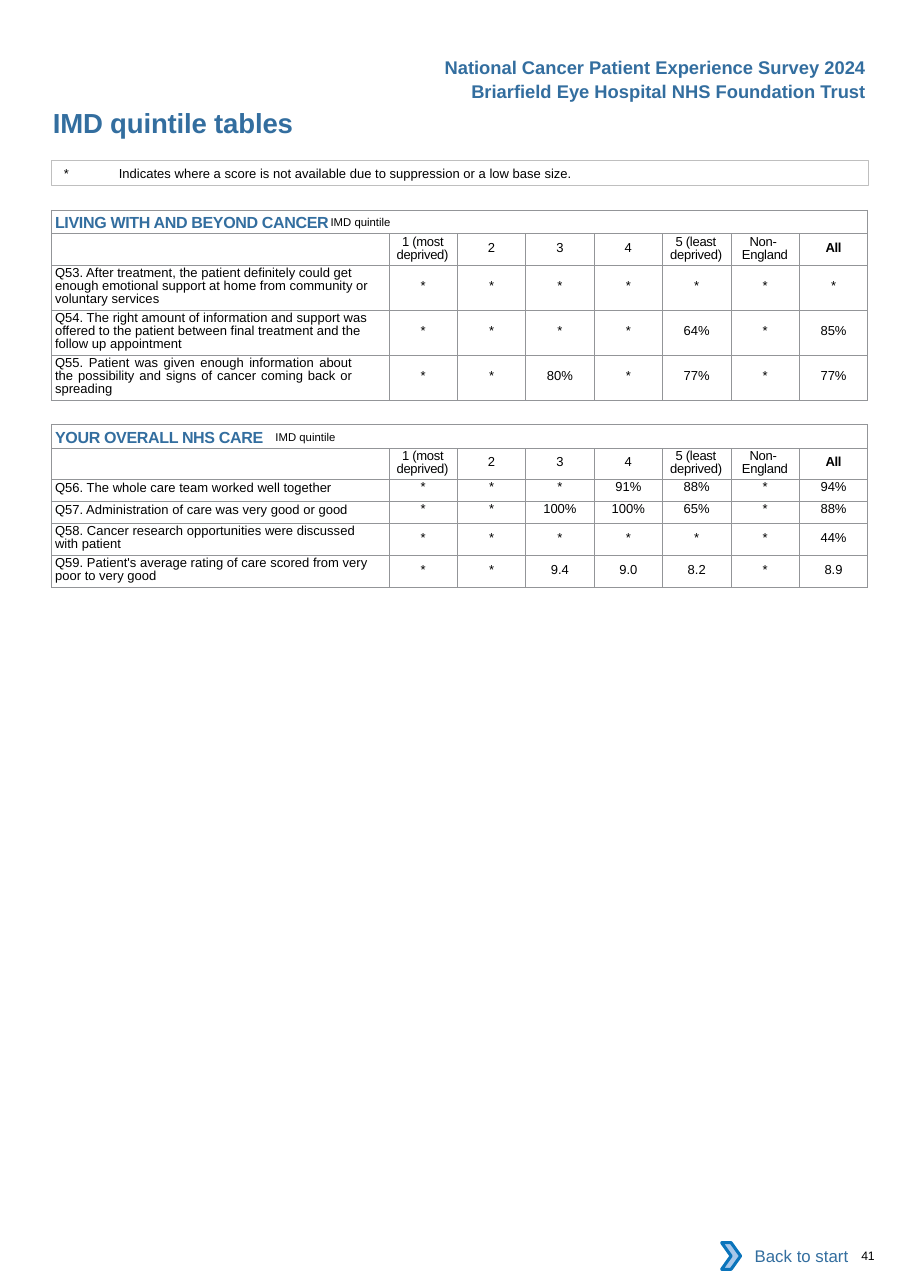
from lxml.etree import SubElement
from pptx import Presentation
from pptx.dml.color import RGBColor
from pptx.enum.shapes import MSO_SHAPE
from pptx.enum.text import MSO_ANCHOR, PP_ALIGN
from pptx.oxml.ns import qn
from pptx.util import Pt

BLUE = RGBColor(0x33, 0x6E, 0x9F)
BLACK = RGBColor(0, 0, 0)
WHITE = RGBColor(0xFF, 0xFF, 0xFF)
BOX_GREY = RGBColor(0xBF, 0xBF, 0xBF)
GRID_GREY = RGBColor(0x93, 0x95, 0x98)
ARROW_FILL = RGBColor(0xA8, 0xC7, 0xE9)
ARROW_LINE = RGBColor(0x0A, 0x74, 0xBB)

LEFT, WIDTH = 33.8, 533.5
QUESTION_WIDTH, SCORE_WIDTH = 220.4, 44.73
ROW_HEIGHTS = {1: 14.3, 2: 20.9, 3: 29.4}
COLUMNS = ["1 (most deprived)", "2", "3", "4", "5 (least deprived)", "Non- England", "All"]

LIVING = [
    ("Q53. After treatment, the patient definitely could get enough emotional support "
     "at home from community or voluntary services", 3, "* * * * * * *"),
    ("Q54. The right amount of information and support was offered to the patient "
     "between final treatment and the follow up appointment", 3, "* * * * 64% * 85%"),
    ("Q55. Patient was given enough information about the possibility and signs of "
     "cancer coming back or spreading", 3, "* * 80% * 77% * 77%"),
]
OVERALL = [
    ("Q56. The whole care team worked well together", 1, "* * * 91% 88% * 94%"),
    ("Q57. Administration of care was very good or good", 1, "* * 100% 100% 65% * 88%"),
    ("Q58. Cancer research opportunities were discussed with patient", 2, "* * * * * * 44%"),
    ("Q59. Patient's average rating of care scored from very poor to very good", 2,
     "* * 9.4 9.0 8.2 * 8.9"),
]


def style_run(r, size, color=BLACK, bold=False, spacing=0):
    """Set the font of one run, with letter spacing in points."""
    r.font.name, r.font.size, r.font.bold = "Arial", Pt(size), bold
    r.font.color.rgb = color
    r._r.get_or_add_rPr().set("spc", str(round(spacing * 100)))


def write(tf, text, size, color=BLACK, bold=False, align=PP_ALIGN.LEFT, spacing=0):
    """Fill a text frame with one formatted paragraph and return it."""
    tf.word_wrap = True
    p = tf.paragraphs[0]
    p.text = text
    p.alignment = align
    for r in p.runs:
        style_run(r, size, color, bold, spacing)
    return p


def set_indent(p, left, first=0, right=0, tab=None):
    """Set paragraph indents and an optional left tab stop."""
    pPr = p._p.get_or_add_pPr()
    for name, value in (("marL", left), ("indent", first), ("marR", right)):
        pPr.set(name, str(Pt(value)))
    if tab:
        tabs = SubElement(pPr, qn("a:tabLst"))
        SubElement(tabs, qn("a:tab"), pos=str(Pt(tab)), algn="l")


def set_margins(part, left=0, top=0, right=0, bottom=0):
    """Set the inner margins of a cell or text frame."""
    part.margin_left, part.margin_top = Pt(left), Pt(top)
    part.margin_right, part.margin_bottom = Pt(right), Pt(bottom)


def set_borders(cell):
    """Draw thin grey borders around a cell and clear its fill."""
    tcPr = cell._tc.get_or_add_tcPr()
    for side in "TB" if cell.is_spanned else "LRTB":
        ln = SubElement(tcPr, qn(f"a:ln{side}"), w=str(Pt(0.5)))
        fill = SubElement(ln, qn("a:solidFill"))
        SubElement(fill, qn("a:srgbClr"), val=str(GRID_GREY))
    cell.fill.background()


def add_heading(s, title, lines):
    """Place the right-aligned survey lines and the page title."""
    for i, line in enumerate(lines):
        sp = s.shapes.add_textbox(Pt(273.1), Pt(33.1 + 16 * i), Pt(300), Pt(21.6))
        write(sp.text_frame, line, 12, BLUE, True, PP_ALIGN.RIGHT)
    sp = s.shapes.title
    sp.left, sp.top, sp.width, sp.height = Pt(LEFT), Pt(69.1), Pt(324), Pt(21.6)
    tf = sp.text_frame
    set_margins(tf)
    tf.vertical_anchor = MSO_ANCHOR.TOP
    set_indent(write(tf, title, 18, BLUE, True, spacing=-0.1), 0.7)


def add_note(s, x, y, w, h):
    """Place the outlined note about suppressed scores."""
    sp = s.shapes.add_shape(MSO_SHAPE.RECTANGLE, Pt(x), Pt(y), Pt(w), Pt(h))
    sp.shadow.inherit = False
    sp.fill.background()
    sp.line.color.rgb, sp.line.width = BOX_GREY, Pt(0.5)
    set_margins(sp.text_frame)
    p = write(sp.text_frame, "*\tIndicates where a score is not available due to "
              "suppression or a low base size.", 8.5)
    set_indent(p, 7.9, tab=24.5)


def fill_column_heads(table):
    """Write the quintile names in the second table row."""
    for c, name in enumerate(COLUMNS, 1):
        cell = table.cell(1, c)
        wraps = " " in name
        set_margins(cell, top=1.4 if wraps else 4.3)
        align = PP_ALIGN.LEFT if wraps else PP_ALIGN.CENTER
        p = write(cell.text_frame, name, 8.5, bold=name == "All", align=align,
                  spacing=-0.2)
        if wraps:
            p.line_spacing = Pt(8.6)
            left, first = (7.2, 5) if name.startswith("Non") else (5, 3.6)
            set_indent(p, left, first)


def fill_question(table, row, question, lines, scores):
    """Write one question and its scores."""
    cell = table.cell(row, 0)
    set_margins(cell, top=1.4 if lines > 1 else 0.7)
    justified = question.startswith("Q55")
    p = write(cell.text_frame, question, 8.5,
              align=PP_ALIGN.JUSTIFY if justified else PP_ALIGN.LEFT)
    if lines > 1:
        p.line_spacing = Pt(8.6)
    set_indent(p, 2.2, right=24 if justified else 8)
    for c, score in enumerate(scores.split(), 1):
        cell = table.cell(row, c)
        set_margins(cell, top=4.3 * (lines - 1) + 0.4)
        write(cell.text_frame, score, 8.5, align=PP_ALIGN.CENTER)


def add_score_table(s, x, y, w, heading, questions):
    """Place one section table with its heading, column names and scores."""
    heights = [15.4, 20.4] + [ROW_HEIGHTS[lines] for _, lines, _ in questions]
    frame = s.shapes.add_table(len(heights), 8, Pt(x), Pt(y), Pt(w), Pt(sum(heights)))
    table = frame.table
    table.first_row = table.horz_banding = False
    for i, column in enumerate(table.columns):
        column.width = Pt(SCORE_WIDTH if i else QUESTION_WIDTH)
    for row, height in zip(table.rows, heights):
        row.height = Pt(height)
    head = table.cell(0, 0)
    head.merge(table.cell(0, 7))
    head.vertical_anchor = MSO_ANCHOR.MIDDLE
    p = write(head.text_frame, heading + "\t", 10.5, BLUE, True, spacing=-0.2)
    set_indent(p, 2.2, tab=340)
    r = p.add_run()
    r.text = "IMD quintile"
    style_run(r, 12.8)
    r._r.get_or_add_rPr().set("baseline", "10000")
    set_margins(head)
    fill_column_heads(table)
    for row, question in enumerate(questions, 2):
        fill_question(table, row, *question)
    for cell in table.iter_cells():
        set_borders(cell)
        if not cell.text_frame.text:
            set_margins(cell)
            SubElement(cell.text_frame.paragraphs[0]._p, qn("a:endParaRPr"), sz="850")


def add_footer(s, x, y, w, h):
    """Place the back-to-start button and the page number."""
    button = s.shapes.add_group_shape()
    label = button.shapes.add_shape(MSO_SHAPE.RECTANGLE, Pt(x + 5), Pt(y),
                                    Pt(w - 5), Pt(h))
    label.fill.solid()
    label.fill.fore_color.rgb = WHITE
    label.line.fill.background()
    write(label.text_frame, "Back to start", 11, BLUE, align=PP_ALIGN.RIGHT)
    arrow = button.shapes.add_shape(MSO_SHAPE.CHEVRON, Pt(x), Pt(y + 6.4),
                                    Pt(12.4), Pt(17.4))
    arrow.fill.solid()
    arrow.fill.fore_color.rgb = ARROW_FILL
    arrow.line.color.rgb, arrow.line.width = ARROW_LINE, Pt(2)
    for sp in (label, arrow):
        sp.shadow.inherit = False
    number = s.shapes.add_textbox(Pt(x + w - 5.8), Pt(y + 10), Pt(36.7), Pt(9.4))
    set_margins(number.text_frame)
    set_indent(write(number.text_frame, "41", 8, spacing=-0.2), 7.2)


def main():
    """Build the quintile page and save it."""
    prs = Presentation()
    prs.slide_width, prs.slide_height = Pt(594.72), Pt(841.68)
    s = prs.slides.add_slide(prs.slide_layouts[5])
    add_heading(s, "IMD quintile tables",
                ["National Cancer Patient Experience Survey 2024",
                 "Briarfield Eye Hospital NHS Foundation Trust"])
    add_note(s, LEFT, 105, WIDTH, 16)
    add_score_table(s, LEFT, 137.4, WIDTH, "LIVING WITH AND BEYOND CANCER", LIVING)
    add_score_table(s, LEFT, 277.6, WIDTH, "YOUR OVERALL NHS CARE", OVERALL)
    add_footer(s, 471.6, 805.7, 90, 30.2)
    prs.save("out.pptx")


if __name__ == "__main__":
    main()
